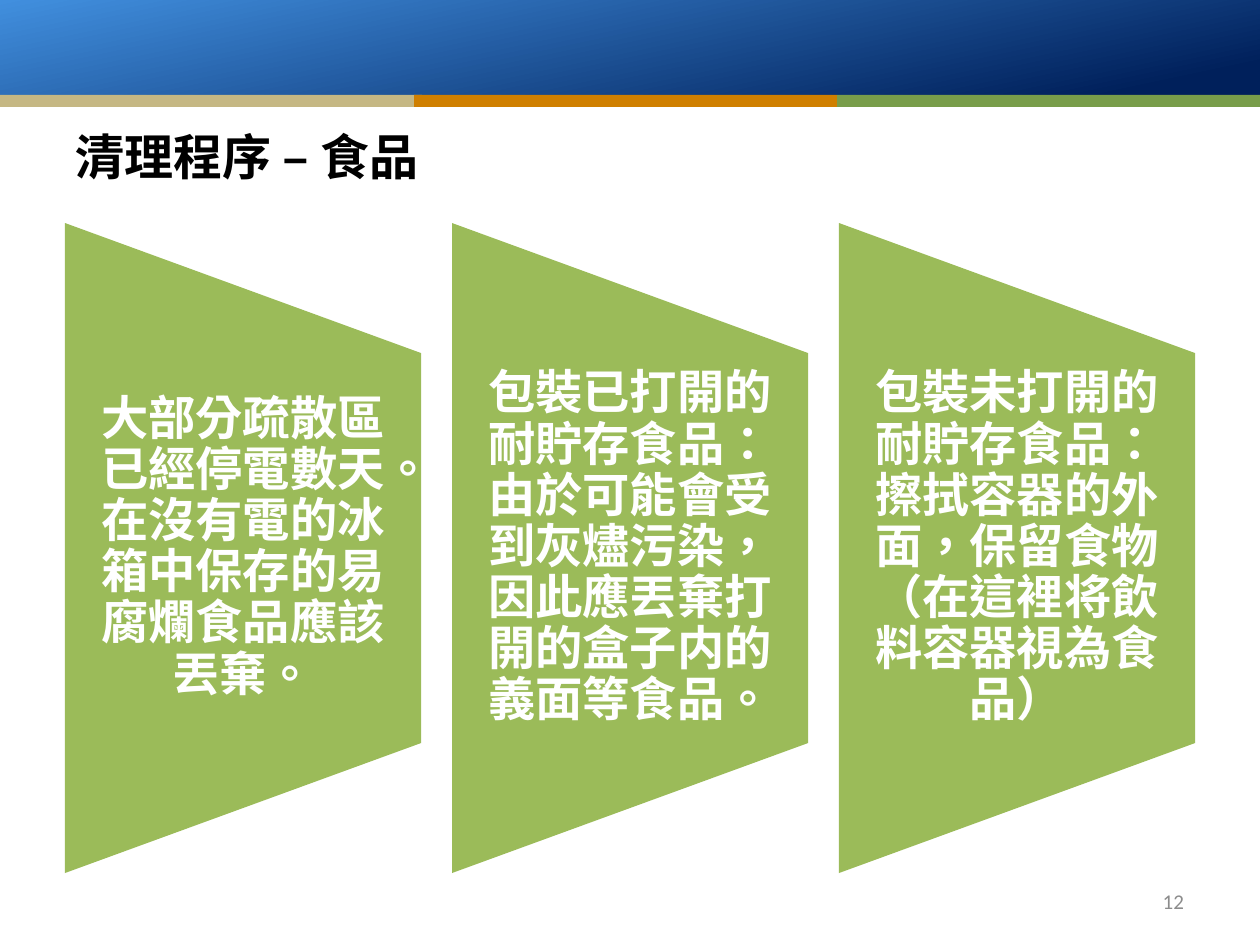
"""Build the food clean-up slide with three side-by-side cards."""
from dataclasses import dataclass
from typing import Any

from lxml.etree import SubElement
from pptx import Presentation
from pptx.dml.color import RGBColor
from pptx.enum.lang import MSO_LANGUAGE_ID as Language
from pptx.enum.shapes import MSO_SHAPE as Preset
from pptx.enum.text import MSO_ANCHOR as Anchor, PP_ALIGN as Align
from pptx.oxml.ns import qn
from pptx.util import Emu, Pt

EMU_PER_INCH = 914400
PX_PER_INCH = 126
LATIN, CHINESE = "Calibri", "Noto Sans CJK TC"
COLORS = {
    "navy": "00205B", "sky": "418FDE", "sand": "C5B783", "orange": "CF7F00",
    "leaf": "789D4A", "card": "9BBB59", "white": "FFFFFF", "black": "000000",
    "gray": "8C8C8C",
}


@dataclass(frozen=True)
class Box:
    left: int
    top: int
    width: int
    height: int


@dataclass(frozen=True)
class Stripe:
    box: Box
    color: str


@dataclass(frozen=True)
class TextStyle:
    color: str
    font: dict[str, Any]
    paragraph: dict[str, Any]
    side_inset: int = 13
    end_inset: int = 6


STRIPES = [
    Stripe(Box(-1, 95, 423, 12), "sand"),
    Stripe(Box(414, 95, 423, 12), "orange"),
    Stripe(Box(837, 95, 423, 12), "leaf"),
]
CARDS = [
    "大部分疏散區已經停電數天。在沒有電的冰箱中保存的易腐爛食品應該丟棄。",
    "包裝已打開的耐貯存食品：由於可能會受到灰燼污染，因此應丟棄打開的盒子内的義面等食品。",
    "包裝未打開的耐貯存食品：擦拭容器的外面，保留食物（在這裡将飲料容器視為食品）",
]
CARD_LEFT, CARD_PITCH, CARD_WIDTH, CARD_HEIGHT = 65, 387, 356, 650
CARD_TOP = 223
TITLE_STYLE = TextStyle("black", {"size": Pt(28), "bold": True}, {"alignment": Align.LEFT})
NUMBER_STYLE = TextStyle(
    "gray", {"size": Pt(12)}, {"alignment": Align.RIGHT, "space_after": Pt(6)}
)
CARD_STYLE = TextStyle(
    "white",
    {"size": Pt(27), "bold": True},
    {"alignment": Align.CENTER, "line_spacing": 0.9, "space_after": Pt(9)},
    side_inset=24,
    end_inset=0,
)


def px(value: int) -> Emu:
    """Turn pixels into EMU."""
    return Emu(round(value * EMU_PER_INCH / PX_PER_INCH))


def rgb(name: str) -> RGBColor:
    """Look up a named colour."""
    return RGBColor.from_string(COLORS[name])


def place(box: Box) -> tuple[Emu, Emu, Emu, Emu]:
    """Give a box as four EMU lengths."""
    return px(box.left), px(box.top), px(box.width), px(box.height)


def set_values(target: Any, values: dict[str, Any]) -> None:
    """Set each named attribute on the target."""
    for name, value in values.items():
        setattr(target, name, value)


def add_block(slide: Any, preset: Preset, box: Box, color: str) -> Any:
    """Add a plain filled shape without line or shadow."""
    shape = slide.shapes.add_shape(preset, *place(box))
    shape.shadow.inherit = False
    shape.fill.solid()
    shape.fill.fore_color.rgb = rgb(color)
    shape.line.fill.background()
    return shape


def add_text(slide: Any, box: Box, runs: list[tuple[str, str]], style: TextStyle) -> None:
    """Add a wrapped, vertically centred text box of (text, font name) runs."""
    frame = slide.shapes.add_textbox(*place(box)).text_frame
    set_values(frame, {
        "word_wrap": True, "vertical_anchor": Anchor.MIDDLE,
        "margin_left": px(style.side_inset), "margin_right": px(style.side_inset),
        "margin_top": px(style.end_inset), "margin_bottom": px(style.end_inset),
    })
    paragraph = frame.paragraphs[0]
    set_values(paragraph, style.paragraph)
    for text, font_name in runs:
        run = paragraph.add_run()
        run.text = text
        set_values(run.font, style.font | {
            "name": font_name, "language_id": Language.TRADITIONAL_CHINESE,
        })
        run.font.color.rgb = rgb(style.color)
        SubElement(run.font._element, qn("a:ea"), typeface=CHINESE)


def add_header(slide: Any) -> None:
    """Draw the gradient band and the stripes below it."""
    band = add_block(slide, Preset.RECTANGLE, Box(0, 0, 1261, 97), "navy")
    band.fill.gradient()
    band.fill.gradient_angle = 102
    stops = [(0.09, "navy"), (1.0, "sky")]
    for stop, (position, color) in zip(band.fill.gradient_stops, stops):
        stop.position = position
        stop.color.rgb = rgb(color)
    for stripe in STRIPES:
        add_block(slide, Preset.RECTANGLE, stripe.box, stripe.color)


def add_card(slide: Any, index: int, text: str) -> None:
    """Draw one card turned on its side, with upright text over it."""
    left = CARD_LEFT + index * CARD_PITCH
    shift = (CARD_HEIGHT - CARD_WIDTH) // 2
    turned = Box(left - shift, CARD_TOP + shift, CARD_HEIGHT, CARD_WIDTH)
    card = add_block(slide, Preset.FLOWCHART_MANUAL_OPERATION, turned, "card")
    card.rotation = 270
    text_height = CARD_HEIGHT * 3 // 5
    text_top = CARD_TOP + (CARD_HEIGHT - text_height) // 2
    text_box = Box(left - 2, text_top, CARD_WIDTH + 4, text_height)
    add_text(slide, text_box, [(text, CHINESE)], CARD_STYLE)


def main() -> None:
    """Build and save the slide."""
    presentation = Presentation()
    presentation.slide_width, presentation.slide_height = px(1260), px(945)
    slide = presentation.slides.add_slide(presentation.slide_layouts[6])
    add_header(slide)
    title_runs = [("清理", LATIN), ("程序 ", CHINESE), ("– 食品", LATIN)]
    add_text(slide, Box(63, 112, 1134, 87), title_runs, TITLE_STYLE)
    add_text(slide, Box(1124, 876, 73, 50), [("12", LATIN)], NUMBER_STYLE)
    for index, text in enumerate(CARDS):
        add_card(slide, index, text)
    presentation.save("out.pptx")


if __name__ == "__main__":
    main()
